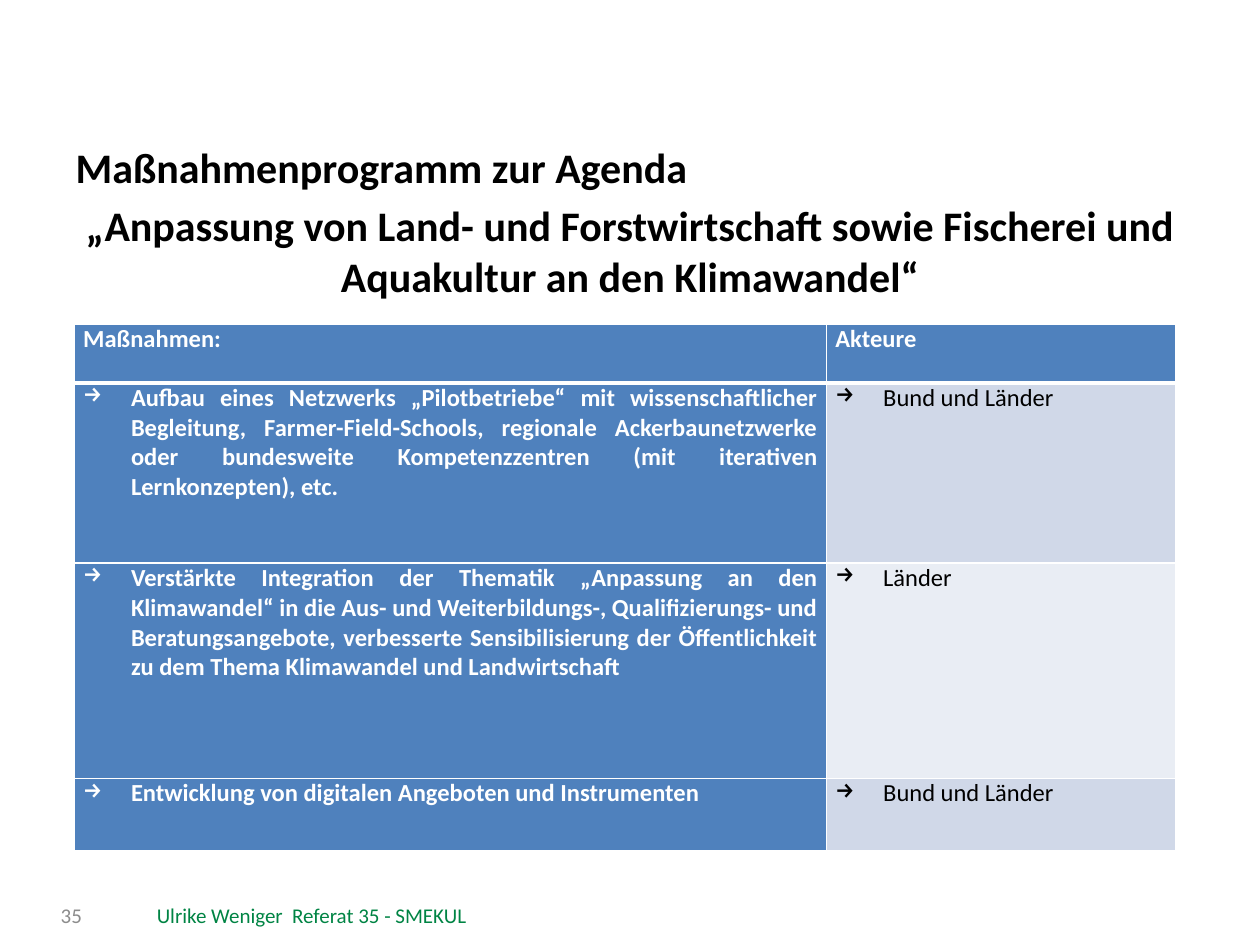
from lxml import etree
from pptx import Presentation
from pptx import util as u
from pptx.dml.color import RGBColor
from pptx.enum import text
from pptx.oxml import ns

WIDTH, HEIGHT = u.Inches(10), u.Inches(7.5)
BLACK = RGBColor(0x00, 0x00, 0x00)
WHITE = RGBColor(0xFF, 0xFF, 0xFF)
GREEN = RGBColor(0x00, 0x84, 0x44)
GRAY = RGBColor(0x8C, 0x8C, 0x8C)
BLUE = RGBColor(0x4F, 0x81, 0xBD)
BANDS = (RGBColor(0xD0, 0xD8, 0xE8), RGBColor(0xE9, 0xED, 0xF4))
ALIGN = text.PP_ALIGN

HEADING = (
    ("Maßnahmenprogramm zur Agenda", ALIGN.LEFT),
    ("„Anpassung von Land- und Forstwirtschaft sowie Fischerei und "
     "Aquakultur an den Klimawandel“", ALIGN.CENTER),
)
ROWS = (
    ("Maßnahmen:", "Akteure"),
    ("Aufbau eines Netzwerks „Pilotbetriebe“ mit wissenschaftlicher Begleitung, "
     "Farmer-Field-Schools, regionale Ackerbaunetzwerke oder bundesweite "
     "Kompetenzzentren (mit iterativen Lernkonzepten), etc.", "Bund und Länder"),
    ("Verstärkte Integration der Thematik „Anpassung an den Klimawandel“ in die "
     "Aus- und Weiterbildungs-, Qualifizierungs- und Beratungsangebote, "
     "verbesserte Sensibilisierung der Öffentlichkeit zu dem Thema Klimawandel "
     "und Landwirtschaft", "Länder"),
    ("Entwicklung von digitalen Angeboten und Instrumenten", "Bund und Länder"),
)
COLUMN_WEIGHTS = (597, 277)
ROW_WEIGHTS = (47, 143, 171, 57)


def inches(left, top, width, height):
    """Return a box given in inches as slide lengths."""
    return tuple(u.Inches(value) for value in (left, top, width, height))


def shares(total, weights):
    """Split a length in proportion to the weights."""
    return [int(total * weight / sum(weights)) for weight in weights]


def write(para, words, size=14, color=BLACK, bold=False, align=ALIGN.LEFT,
          before=0, bullet=None):
    """Write one formatted run into a paragraph."""
    para.alignment = align
    if before:
        para.space_before = u.Pt(before)
    if bullet:
        properties = para._p.get_or_add_pPr()
        hang = u.Inches(0.38)
        properties.set("marL", str(hang))
        properties.set("indent", str(-hang))
        etree.SubElement(properties, ns.qn("a:buChar")).set("char", bullet)
    span = para.add_run()
    span.text = words
    span.font.name = "Calibri"
    span.font.size = u.Pt(size)
    span.font.bold = bold
    span.font.color.rgb = color


def place(shape, box):
    """Move a shape to a box."""
    shape.left, shape.top, shape.width, shape.height = box


def add_heading(page, box):
    """Fill the title placeholder with the heading paragraphs."""
    title = page.shapes.title
    place(title, box)
    frame = title.text_frame
    frame.word_wrap = True
    frame.auto_size = text.MSO_AUTO_SIZE.NONE
    frame.vertical_anchor = text.MSO_ANCHOR.TOP
    for index, (words, align) in enumerate(HEADING):
        para = frame.add_paragraph() if index else frame.paragraphs[0]
        write(para, words, size=24, bold=True, align=align,
              before=4.8 if index else 0)


def set_borders(cell, **widths):
    """Draw white cell edges, with widths in points by side letter."""
    properties = cell._tc.get_or_add_tcPr()
    for side in "LRTB":
        line = etree.SubElement(properties, ns.qn("a:ln" + side))
        line.set("w", str(u.Pt(widths.get(side, 1))))
        fill = etree.SubElement(line, ns.qn("a:solidFill"))
        etree.SubElement(fill, ns.qn("a:srgbClr")).set("val", str(WHITE))


def add_measures(page, box):
    """Add the table of measures and those responsible."""
    table = page.shapes.add_table(len(ROWS), len(ROWS[0]), *box).table
    for column, width in zip(table.columns, shares(box[2], COLUMN_WEIGHTS)):
        column.width = width
    for row, height in zip(table.rows, shares(box[3], ROW_WEIGHTS)):
        row.height = height
    for row, entries in enumerate(ROWS):
        for column, words in enumerate(entries):
            cell = table.cell(row, column)
            strong = row == 0 or column == 0
            cell.margin_left = cell.margin_right = u.Inches(0.07)
            cell.margin_top = cell.margin_bottom = 0
            set_borders(cell, T=3 if row == 1 else 1, B=3 if row == 0 else 1)
            cell.fill.solid()
            cell.fill.fore_color.rgb = BLUE if strong else BANDS[(row - 1) % 2]
            write(cell.text_frame.paragraphs[0], words, bold=strong,
                  color=WHITE if strong else BLACK, align=ALIGN.JUSTIFY,
                  bullet="→" if row else None)


def add_footer_text(page, box, words, color, align):
    """Add one vertically centred footer text."""
    frame = page.shapes.add_textbox(*box).text_frame
    frame.word_wrap = True
    frame.vertical_anchor = text.MSO_ANCHOR.MIDDLE
    write(frame.paragraphs[0], words, size=12, color=color, align=align)


def add_footer(page, box):
    """Add the page number and the author within the footer strip."""
    left, top, width, height = box
    number = (left, top, int(width * 0.17), height)
    author = (left + int(width * 0.205), top, int(width * 0.795), height)
    add_footer_text(page, number, "35", GRAY, ALIGN.RIGHT)
    add_footer_text(page, author, "Ulrike Weniger  Referat 35 - SMEKUL",
                    GREEN, ALIGN.CENTER)


def main():
    """Build and save the deck."""
    deck = Presentation()
    deck.slide_width, deck.slide_height = WIDTH, HEIGHT
    page = deck.slides.add_slide(deck.slide_layouts.get_by_name("Title Only"))
    add_heading(page, inches(0.5, 1.07, 9, 1.4))
    add_measures(page, inches(0.59, 2.57, 8.74, 4.18))
    add_footer(page, inches(0.07, 7.06, 3.99, 0.4))
    deck.save("out.pptx")


if __name__ == "__main__":
    main()
